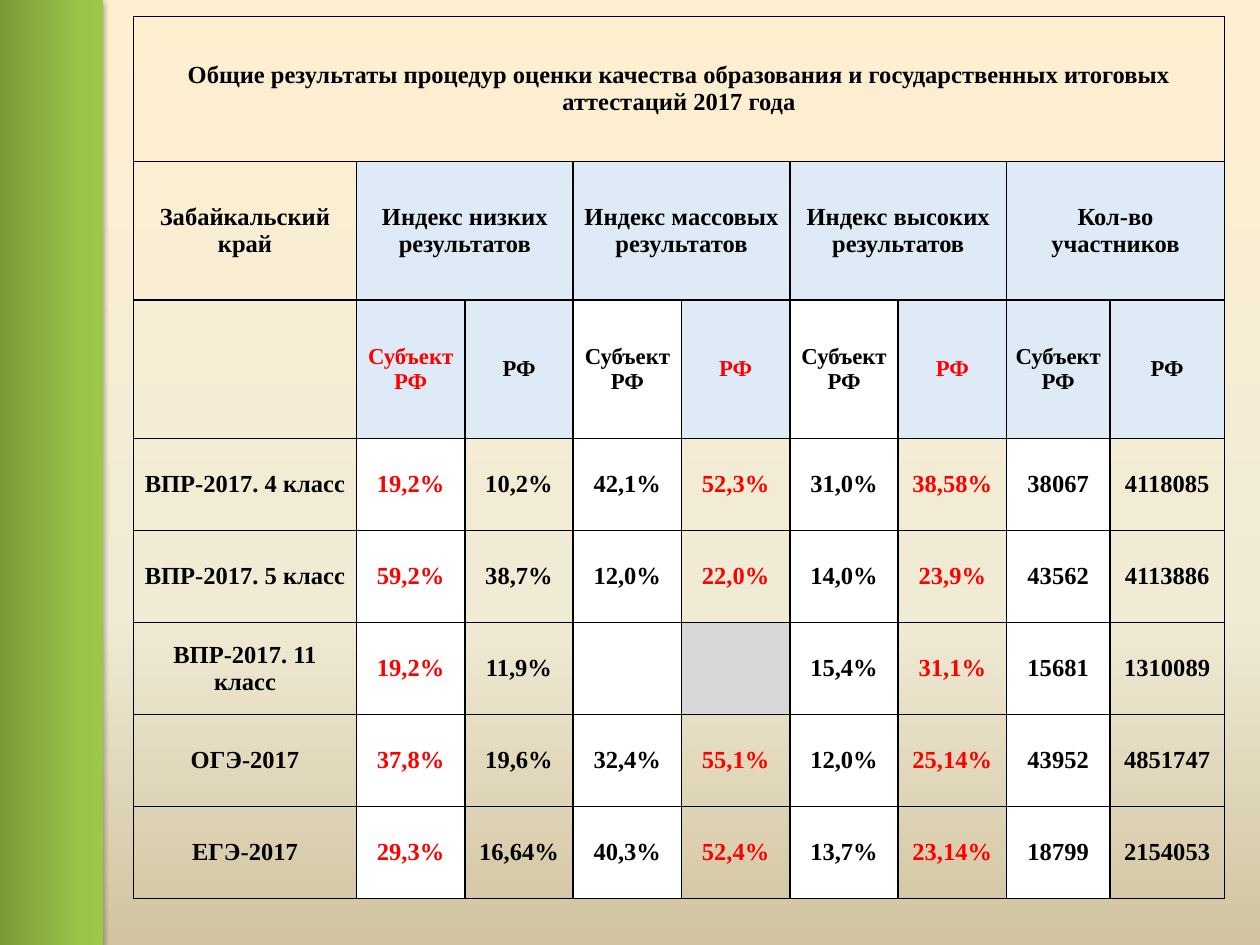
"""Builds a slide with the 2017 assessment results table."""
import lxml.etree
import pptx
import pptx.dml.color
import pptx.enum.shapes
import pptx.enum.text
import pptx.oxml.ns
import pptx.util

RGBColor = pptx.dml.color.RGBColor
Inches = pptx.util.Inches
qn = pptx.oxml.ns.qn

BLACK = RGBColor(0x00, 0x00, 0x00)
RED = RGBColor(0xFF, 0x00, 0x00)
WHITE = RGBColor(0xFF, 0xFF, 0xFF)
PALE_BLUE = RGBColor(0xDE, 0xEB, 0xF6)
GREY = RGBColor(0xD8, 0xD8, 0xD8)
SAND = [(0, RGBColor(0xFF, 0xEF, 0xD1)), (65, RGBColor(0xF0, 0xEB, 0xD5)),
        (100, RGBColor(0xD1, 0xC3, 0x9F))]
GREEN = [(0, RGBColor(0x77, 0x97, 0x37)), (80, RGBColor(0x9B, 0xC3, 0x48)),
         (100, RGBColor(0x9D, 0xC7, 0x46))]

FONT = "Times New Roman"
COLUMNS = [1.77] + [0.86] * 6 + [0.82, 0.91]
ROWS = [1.15, 1.1, 1.1] + [0.73] * 5
TITLE = ("Общие результаты процедур оценки качества образования "
         "и государственных итоговых аттестаций 2017 года")
GROUPS = ["Индекс низких результатов", "Индекс массовых результатов",
          "Индекс высоких результатов", "Кол-во участников"]
RESULTS = [
    ["ВПР-2017. 4 класс", "19,2%", "10,2%", "42,1%", "52,3%", "31,0%", "38,58%", "38067", "4118085"],
    ["ВПР-2017. 5 класс", "59,2%", "38,7%", "12,0%", "22,0%", "14,0%", "23,9%", "43562", "4113886"],
    ["ВПР-2017. 11 класс", "19,2%", "11,9%", "", "", "15,4%", "31,1%", "15681", "1310089"],
    ["ОГЭ-2017", "37,8%", "19,6%", "32,4%", "55,1%", "12,0%", "25,14%", "43952", "4851747"],
    ["ЕГЭ-2017", "29,3%", "16,64%", "40,3%", "52,4%", "13,7%", "23,14%", "18799", "2154053"],
]
RED_COLUMNS = {1, 4, 6}
WHITE_SUBHEADS = {3, 5}


def add_element(parent, tag, **attributes):
    """Append a child element with the given attributes."""
    child = lxml.etree.SubElement(parent, qn(tag))
    for name, value in attributes.items():
        child.set(name, str(value))
    return child


def set_gradient(fill, owner, stops, angle):
    """Give the fill inside owner a linear gradient, its angle clockwise."""
    fill.gradient()
    gradient = owner.find(".//" + qn("a:gradFill"))
    for child in list(gradient):
        gradient.remove(child)
    stop_list = add_element(gradient, "a:gsLst")
    for position, color in stops:
        stop = add_element(stop_list, "a:gs", pos=position * 1000)
        add_element(stop, "a:srgbClr", val=color)
    add_element(gradient, "a:lin", ang=angle * 60000, scaled=0)


def set_borders(cell):
    """Draw a thin black line on every side of a cell."""
    properties = cell._tc.get_or_add_tcPr()
    for index, side in enumerate(["a:lnL", "a:lnR", "a:lnT", "a:lnB"]):
        line = add_element(properties, side, w=pptx.util.Pt(1))
        properties.insert(index, line)
        add_element(add_element(line, "a:solidFill"), "a:srgbClr", val=BLACK)


def set_text(cell, text, size, color):
    """Write bold centred text in a cell."""
    cell.text = text
    cell.vertical_anchor = pptx.enum.text.MSO_ANCHOR.MIDDLE
    cell.margin_left = cell.margin_right = Inches(0.07)
    cell.margin_top = cell.margin_bottom = 0
    para = cell.text_frame.paragraphs[0]
    para.alignment = pptx.enum.text.PP_ALIGN.CENTER
    para.font.name = FONT
    para.font.size = pptx.util.Pt(size)
    para.font.bold = True
    para.font.color.rgb = color


def cell_fill(row, column, text):
    """Return the fill colour of a cell, or None for no fill."""
    if row == 0 or column == 0:
        return None
    if row == 1:
        return PALE_BLUE
    if row == 2:
        return WHITE if column in WHITE_SUBHEADS else PALE_BLUE
    if column % 2:
        return WHITE
    return None if text else GREY


def add_results_table(page, left, top):
    """Place the results table with its title and two header rows."""
    grid = [[TITLE] + [""] * 8,
            ["Забайкальский край"] + [text for group in GROUPS for text in (group, "")],
            [""] + ["Субъект РФ", "РФ"] * len(GROUPS)] + RESULTS
    frame = page.shapes.add_table(len(ROWS), len(COLUMNS), left, top,
                                  Inches(sum(COLUMNS)), Inches(sum(ROWS)))
    table = frame.table
    table.first_row = table.horz_banding = False
    for column, width in zip(table.columns, COLUMNS):
        column.width = Inches(width)
    for row, height in zip(table.rows, ROWS):
        row.height = Inches(height)
    for row, texts in enumerate(grid):
        for column, text in enumerate(texts):
            cell = table.cell(row, column)
            is_red = row >= 2 and column in RED_COLUMNS
            set_text(cell, text, 13 if row == 2 else 14, RED if is_red else BLACK)
            color = cell_fill(row, column, text)
            if color is None:
                cell.fill.background()
            else:
                cell.fill.solid()
                cell.fill.fore_color.rgb = color
            set_borders(cell)
    table.cell(0, 0).merge(table.cell(0, len(COLUMNS) - 1))
    for column in range(1, len(COLUMNS), 2):
        table.cell(1, column).merge(table.cell(1, column + 1))


def add_side_band(page, center, length, thickness):
    """Place the green band, turned upright around its center."""
    band = page.shapes.add_shape(
        pptx.enum.shapes.MSO_SHAPE.RECTANGLE, center - length // 2,
        (length - thickness) // 2, length, thickness)
    band.rotation = 90
    band.line.fill.background()
    properties = band._element.spPr
    set_gradient(band.fill, properties, GREEN, 270)
    effects = add_element(properties, "a:effectLst")
    shadow = add_element(effects, "a:outerShdw", blurRad=pptx.util.Pt(3.1),
                         dist=pptx.util.Pt(1.8), dir=5400000, rotWithShape=0)
    color = add_element(shadow, "a:srgbClr", val=BLACK)
    add_element(color, "a:alpha", val=35000)


def main():
    """Build and save the deck."""
    deck = pptx.Presentation()
    deck.slide_width, deck.slide_height = Inches(10), Inches(7.5)
    page = deck.slides.add_slide(deck.slide_layouts.get_by_name("Blank"))
    set_gradient(page.background.fill, page._element, SAND, 90)
    add_results_table(page, Inches(1.06), Inches(0.13))
    add_side_band(page, Inches(0.39), deck.slide_height, Inches(0.86))
    deck.save("out.pptx")


if __name__ == "__main__":
    main()
